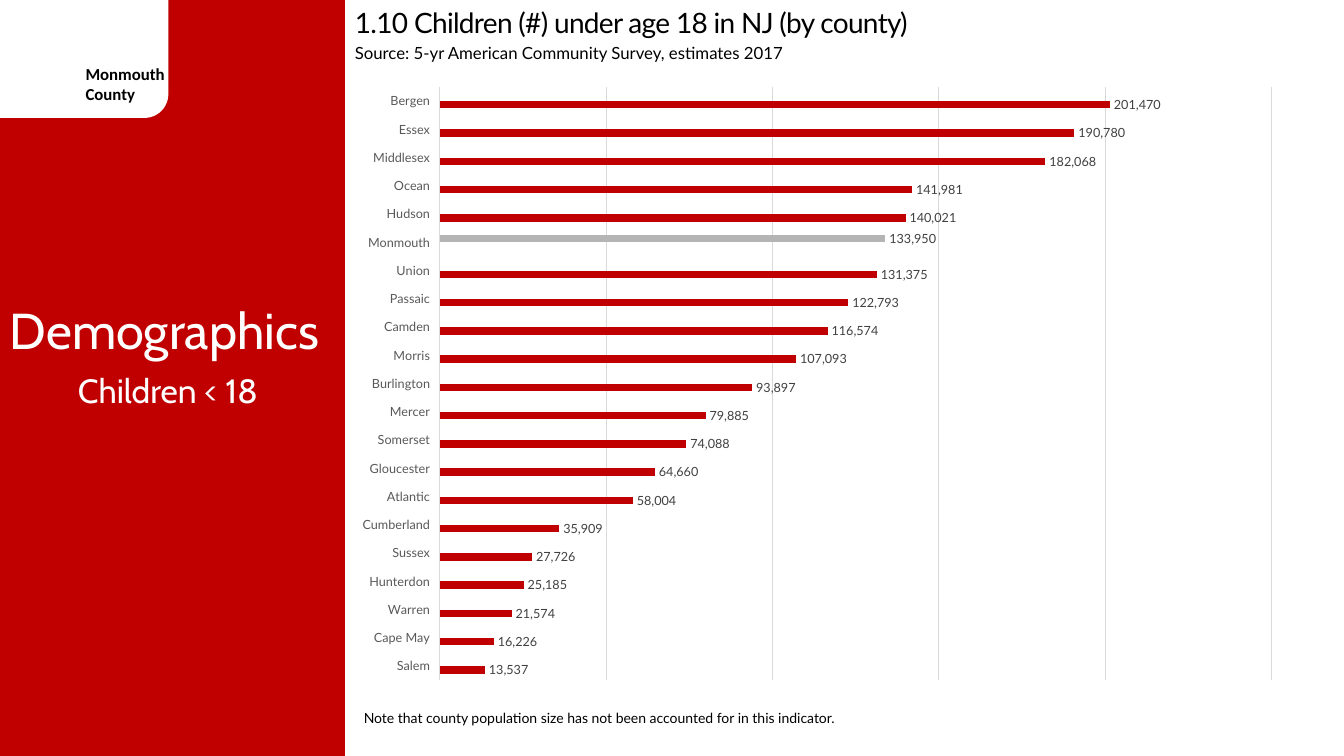
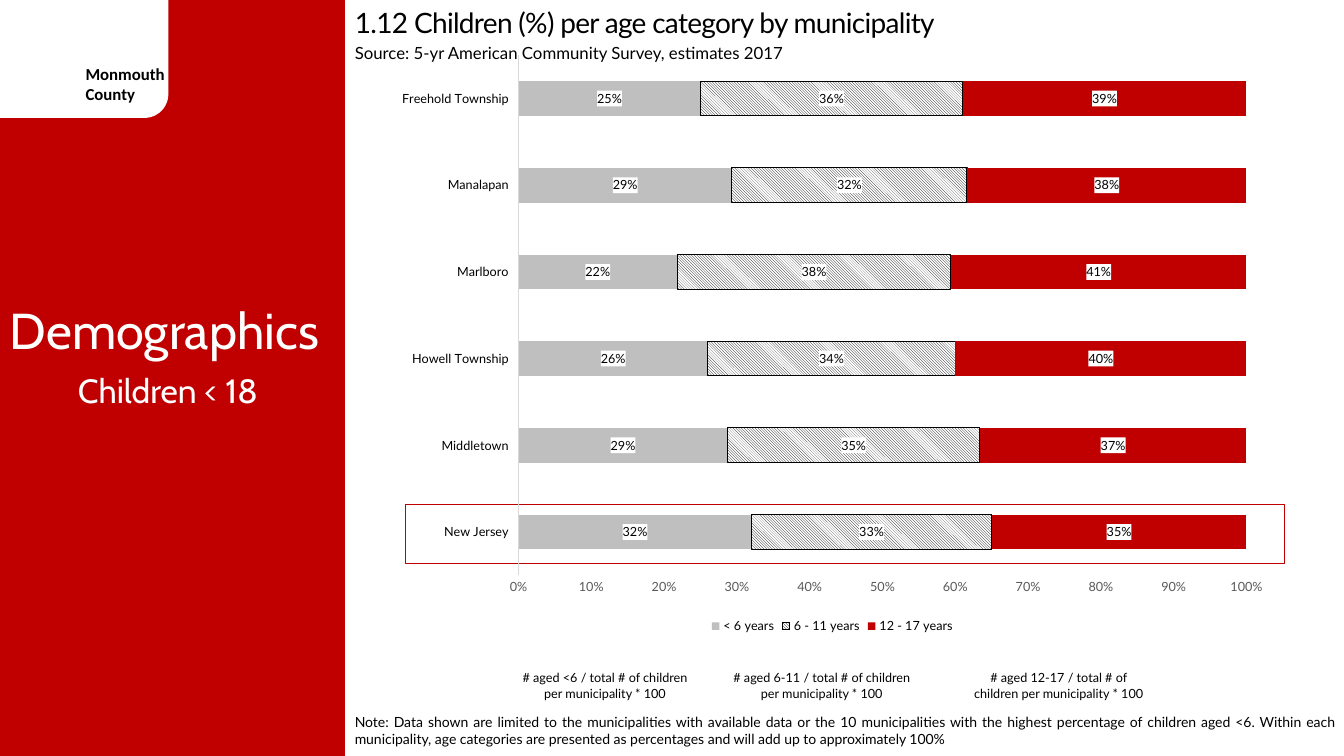
from dataclasses import dataclass

from pptx import Presentation
from pptx.chart.data import CategoryChartData
from pptx.dml.color import RGBColor
from pptx.enum.chart import XL_CHART_TYPE, XL_LABEL_POSITION, XL_LEGEND_POSITION, XL_TICK_LABEL_POSITION, XL_TICK_MARK
from pptx.enum.dml import MSO_PATTERN
from pptx.enum.shapes import MSO_SHAPE
from pptx.enum.text import MSO_ANCHOR, MSO_AUTO_SIZE, PP_ALIGN
from pptx.oxml import parse_xml
from pptx.oxml.ns import nsdecls, qn
from pptx.util import Pt

EMU_PER_PX = 9144


@dataclass(frozen=True)
class Theme:
    red: str = "C00000"
    white: str = "FFFFFF"
    black: str = "000000"
    silver: str = "BFBFBF"
    highlight: str = "B4B4B4"
    grid: str = "D9D9D9"
    axis_text: str = "595959"
    label_text: str = "404040"
    heading_face: str = "Cabin"
    text_face: str = "Lato"
    brand_face: str = "Calibri"
    section_size: int = 36
    topic_size: int = 24
    title_size: int = 20
    source_size: int = 12
    note_size: int = 10
    small_size: int = 9
    title_spacing: int = -50


THEME = Theme()
SOURCE = "Source: 5-yr American Community Survey, estimates 2017"

COUNTIES = {
    "Salem": 13537, "Cape May": 16226, "Warren": 21574, "Hunterdon": 25185,
    "Sussex": 27726, "Cumberland": 35909, "Atlantic": 58004, "Gloucester": 64660,
    "Somerset": 74088, "Mercer": 79885, "Burlington": 93897, "Morris": 107093,
    "Camden": 116574, "Passaic": 122793, "Union": 131375, "Monmouth": 133950,
    "Hudson": 140021, "Ocean": 141981, "Middlesex": 182068, "Essex": 190780,
    "Bergen": 201470,
}
HOME_COUNTY = "Monmouth"

MUNICIPALITIES = {
    "New Jersey": (0.32, 0.33, 0.35),
    "Middletown": (0.29, 0.35, 0.37),
    "Howell Township": (0.26, 0.34, 0.40),
    "Marlboro": (0.22, 0.38, 0.41),
    "Manalapan": (0.29, 0.32, 0.38),
    "Freehold Township": (0.25, 0.36, 0.39),
}
AGE_GROUPS = ("< 6 years", "6 - 11 years", "12 - 17 years")
FORMULAS = {500: "<6", 715: "6-11", 950: "12-17"}


def px(*lengths):
    return [length * EMU_PER_PX for length in lengths]


def rgb(color):
    return RGBColor.from_string(color)


def apply(target, values):
    for name, value in values.items():
        setattr(target, name, value)


def style_font(font, size, color=THEME.black, face=THEME.text_face, bold=False):
    apply(font, {"size": Pt(size), "name": face, "bold": bold})
    font.color.rgb = rgb(color)


def style_line(line, color, width=0.75):
    line.color.rgb = rgb(color)
    line.width = Pt(width)


def chart_fill(fill):
    return parse_xml(f"<c:spPr {nsdecls('c', 'a')}>{fill}</c:spPr>")


class Deck:
    def __init__(self, theme):
        self.theme = theme
        self.presentation = Presentation()
        width, height = px(1333, 750)
        apply(self.presentation, {"slide_width": width, "slide_height": height})
        self.layout = self.presentation.slide_layouts.get_by_name("Title Only")
        self.slide = None

    def start_slide(self, title):
        theme = self.theme
        self.slide = self.presentation.slides.add_slide(self.layout)
        if len(self.presentation.slides) == 1:
            self.share_band()
        self.title(title)
        self.text(SOURCE, (342, 37, 705, 30), theme.source_size)
        heading = {"color": theme.white, "face": theme.heading_face}
        self.text("Demographics", (0, 292, 342, 71), theme.section_size, **heading)
        self.text("Children < 18", (30, 362, 273, 50), theme.topic_size,
                  align=PP_ALIGN.CENTER, **heading)

    def share_band(self):
        theme = self.theme
        band = [
            self.box((0, 0, 342, 750), theme.red),
            self.box((-33, -25, 200, 142), theme.white, kind=MSO_SHAPE.ROUNDED_RECTANGLE),
            self.text("Monmouth County", (75, 58, 108, 50), theme.source_size,
                      face=theme.brand_face, bold=True),
        ]
        for number, shape in enumerate(band, start=101):
            next(shape.element.iter(qn("p:cNvPr"))).set("id", str(number))
            self.layout.shapes.element.append(shape.element)

    def title(self, words):
        shape = self.slide.shapes.title
        left, top, width, height = px(342, 0, 900, 44)
        apply(shape, {"left": left, "top": top, "width": width, "height": height})
        self.fill_text(shape, words, self.theme.title_size)
        for properties in shape.element.iter(qn("a:rPr")):
            properties.set("spc", str(self.theme.title_spacing))

    def text(self, words, frame, size, **options):
        shape = self.slide.shapes.add_textbox(*px(*frame))
        self.fill_text(shape, words, size, **options)
        return shape

    def fill_text(self, shape, words, size, align=PP_ALIGN.LEFT,
                  anchor=MSO_ANCHOR.TOP, **font):
        text_frame = shape.text_frame
        apply(text_frame, {"text": words, "word_wrap": True,
                           "auto_size": MSO_AUTO_SIZE.NONE, "vertical_anchor": anchor})
        paragraph = text_frame.paragraphs[0]
        paragraph.alignment = align
        style_font(paragraph.runs[0].font, size, **font)

    def box(self, frame, fill, line=None, kind=MSO_SHAPE.RECTANGLE):
        shape = self.slide.shapes.add_shape(kind, *px(*frame))
        shape.shadow.inherit = False
        shape.fill.solid()
        shape.fill.fore_color.rgb = rgb(fill)
        if line:
            style_line(shape.line, line, 0.25)
        else:
            shape.line.fill.background()
        return shape

    def bar_chart(self, kind, frame, categories, series, gap, number_format,
                  label_color, category_color, position=None):
        theme = self.theme
        data = CategoryChartData(number_format=number_format)
        data.categories = categories
        for name, values, _ in series:
            data.add_series(name, values)
        chart = self.slide.shapes.add_chart(kind, *px(*frame), data).chart
        apply(chart, {"has_title": False, "has_legend": False})
        style_font(chart.font, theme.note_size, face=theme.brand_face)
        chart.element.find(qn("c:txPr")).addprevious(chart_fill("<a:noFill/>"))
        plot = chart.plots[0]
        apply(plot, {"gap_width": gap, "vary_by_categories": False})
        for bars, (_, _, color) in zip(plot.series, series):
            bars.invert_if_negative = False
            bars.format.fill.solid()
            bars.format.fill.fore_color.rgb = rgb(color)
            labels = bars.data_labels
            apply(labels, {"show_value": True, "number_format": number_format,
                           "number_format_is_linked": False})
            if position is not None:
                labels.position = position
            style_font(labels.font, theme.small_size, label_color)
        axis = chart.category_axis
        apply(axis, {"major_tick_mark": XL_TICK_MARK.NONE, "has_major_gridlines": False,
                     "tick_label_position": XL_TICK_LABEL_POSITION.LOW})
        style_font(axis.tick_labels.font, theme.small_size, category_color)
        style_line(axis.format.line, theme.grid)
        return chart

    def plot_area(self, chart, **fractions):
        edges = "".join(f'<c:{name} val="{value}"/>' for name, value in fractions.items())
        layout = parse_xml(
            f'<c:layout {nsdecls("c")}><c:manualLayout><c:layoutTarget val="inner"/>'
            f'<c:xMode val="edge"/><c:yMode val="edge"/>{edges}</c:manualLayout></c:layout>')
        area = next(chart.element.iter(qn("c:plotArea")))
        for previous in area.findall(qn("c:layout")):
            area.remove(previous)
        area.insert(0, layout)

    def hatch(self, bars):
        fill = bars.format.fill
        fill.patterned()
        fill.pattern = MSO_PATTERN.LIGHT_DOWNWARD_DIAGONAL
        fill.fore_color.rgb = rgb(self.theme.black)
        fill.back_color.rgb = rgb(self.theme.white)
        style_line(bars.format.line, self.theme.black)

    def label_background(self, chart):
        color = f'<a:solidFill><a:srgbClr val="{self.theme.white}"/></a:solidFill>'
        for labels in chart.element.iter(qn("c:dLbls")):
            labels.find(qn("c:txPr")).addprevious(chart_fill(color))

    def legend(self, chart):
        chart.has_legend = True
        apply(chart.legend, {"position": XL_LEGEND_POSITION.BOTTOM,
                             "include_in_layout": False})
        style_font(chart.legend.font, self.theme.small_size)


def county_slide(deck):
    theme = deck.theme
    deck.start_slide("1.10 Children (#) under age 18 in NJ (by county)")
    others = [None if name == HOME_COUNTY else count for name, count in COUNTIES.items()]
    home = [count if name == HOME_COUNTY else None for name, count in COUNTIES.items()]
    chart = deck.bar_chart(
        XL_CHART_TYPE.BAR_CLUSTERED, (351, 80, 948, 633), list(COUNTIES),
        [("Series 1", others, theme.red), ("Series 2", home, theme.highlight)],
        182, "#,##0", theme.label_text, theme.axis_text, XL_LABEL_POSITION.OUTSIDE_END)
    deck.plot_area(chart, x=0.09, y=0.01, w=0.87, h=0.93)
    axis = chart.value_axis
    apply(axis, {"visible": False, "has_major_gridlines": True, "minimum_scale": 0,
                 "maximum_scale": 250000, "major_unit": 50000})
    style_line(axis.major_gridlines.format.line, theme.grid)
    deck.text("Note that county population size has not been accounted for in this indicator.",
              (351, 699, 800, 28), theme.note_size)


def municipality_slide(deck):
    theme = deck.theme
    deck.start_slide("1.12 Children (%) per age category by municipality")
    deck.box((402, 500, 872, 59), theme.white, theme.red)
    deck.text("Note: Data shown are limited to the municipalities with available data or the "
              "10 municipalities with the highest percentage of children aged <6. Within each "
              "municipality, age categories are presented as percentages and will add up to "
              "approximately 100%", (342, 700, 992, 50), theme.note_size,
              align=PP_ALIGN.JUSTIFY, anchor=MSO_ANCHOR.MIDDLE)
    for left, ages in FORMULAS.items():
        deck.text(f"# aged {ages} / total # of children per municipality * 100",
                  (left, 660, 200, 40), theme.small_size,
                  align=PP_ALIGN.CENTER, anchor=MSO_ANCHOR.MIDDLE)
    colors = (theme.silver, theme.white, theme.red)
    chart = deck.bar_chart(
        XL_CHART_TYPE.BAR_STACKED_100, (381, 43, 889, 590), list(MUNICIPALITIES),
        list(zip(AGE_GROUPS, zip(*MUNICIPALITIES.values()), colors)),
        150, "0%", theme.black, theme.black)
    deck.hatch(chart.plots[0].series[1])
    deck.label_background(chart)
    deck.legend(chart)
    axis = chart.value_axis
    apply(axis, {"has_major_gridlines": False, "major_tick_mark": XL_TICK_MARK.NONE,
                 "minimum_scale": 0, "maximum_scale": 1, "major_unit": 0.1})
    apply(axis.tick_labels, {"number_format": "0%", "number_format_is_linked": False})
    style_font(axis.tick_labels.font, theme.small_size, theme.axis_text)
    axis.format.line.fill.background()


def main():
    deck = Deck(THEME)
    county_slide(deck)
    municipality_slide(deck)
    deck.presentation.save("out.pptx")


if __name__ == "__main__":
    main()
